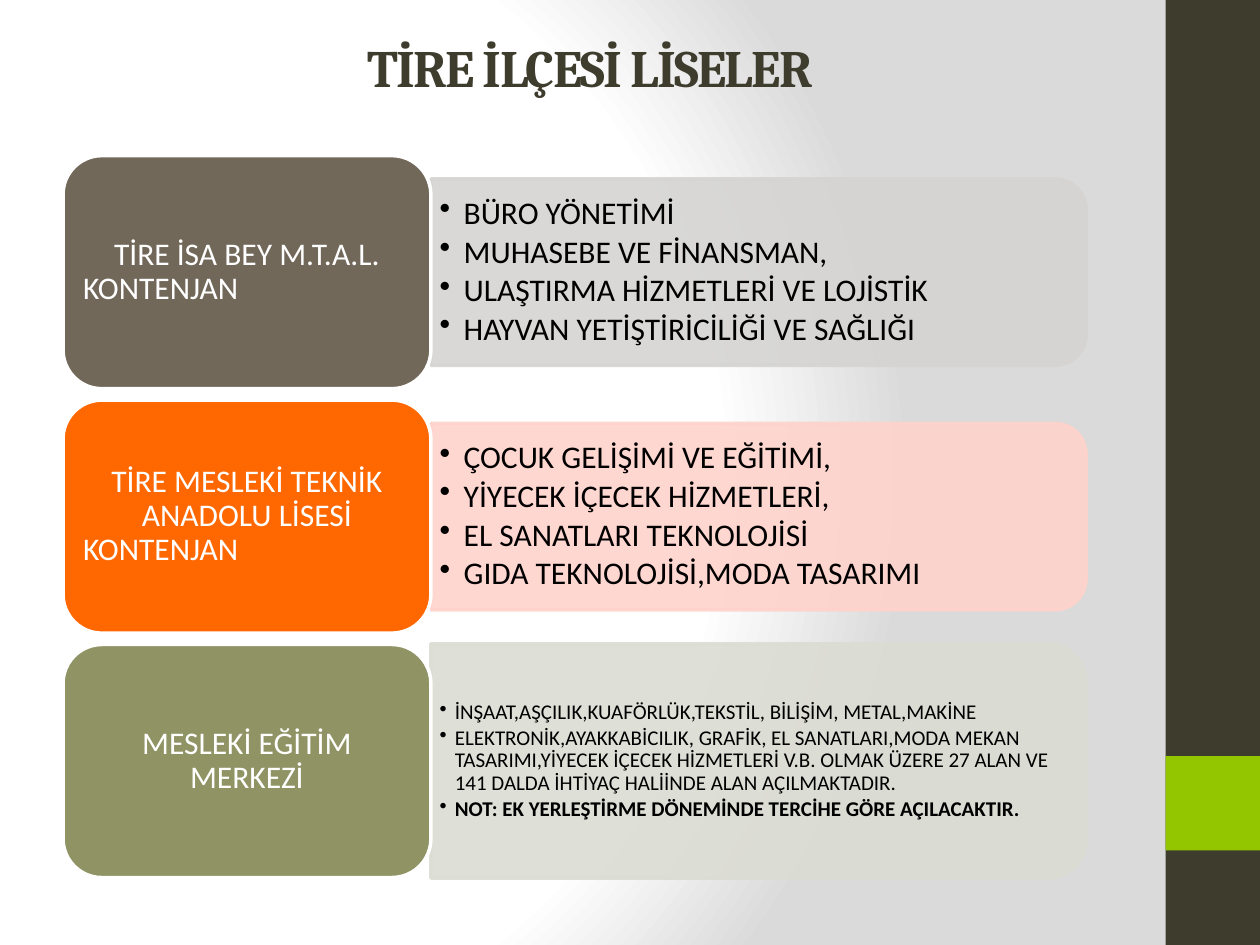
"""Build the slide listing the vocational high schools of the Tire district."""
from lxml.etree import SubElement
from pptx import Presentation
from pptx.dml.color import RGBColor
from pptx.enum.shapes import MSO_SHAPE
from pptx.enum.text import MSO_ANCHOR, PP_ALIGN
from pptx.oxml import parse_xml
from pptx.oxml.ns import nsdecls, qn
from pptx.util import Inches, Pt

WHITE = RGBColor(0xFF, 0xFF, 0xFF)
BLACK = RGBColor(0x00, 0x00, 0x00)
DARK = RGBColor(0x3E, 0x3D, 0x2D)
GREEN = RGBColor(0x94, 0xC6, 0x00)
BROWN = RGBColor(0x71, 0x68, 0x5A)
ORANGE = RGBColor(0xFF, 0x67, 0x00)
OLIVE = RGBColor(0x90, 0x94, 0x65)
PALE_GREY = RGBColor(0xD5, 0xD4, 0xD2)
PALE_PINK = RGBColor(0xFF, 0xD3, 0xCC)
PALE_OLIVE = RGBColor(0xDB, 0xDC, 0xD3)

BACKDROP = f"""<a:gradFill {nsdecls('a')} rotWithShape="1"><a:gsLst>
<a:gs pos="0"><a:srgbClr val="FFFFFF"/></a:gs>
<a:gs pos="75000"><a:srgbClr val="FFFFFF"/></a:gs>
<a:gs pos="100000"><a:srgbClr val="DADADA"/></a:gs></a:gsLst>
<a:path path="circle"><a:fillToRect l="20000" t="50000" r="100000" b="50000"/></a:path>
</a:gradFill>"""

SCHOOLS = [
    (BROWN, PALE_GREY, 1.48, 18, 0.19,
     ["TİRE İSA BEY M.T.A.L.", "KONTENJAN"],
     ["BÜRO YÖNETİMİ", "MUHASEBE VE FİNANSMAN,",
      "ULAŞTIRMA HİZMETLERİ VE LOJİSTİK", "HAYVAN YETİŞTİRİCİLİĞİ VE SAĞLIĞI"]),
    (ORANGE, PALE_PINK, 1.48, 18, 0.19,
     ["TİRE MESLEKİ TEKNİK ANADOLU LİSESİ", "KONTENJAN"],
     ["ÇOCUK GELİŞİMİ VE EĞİTİMİ,", "YİYECEK İÇECEK HİZMETLERİ,",
      "EL SANATLARI TEKNOLOJİSİ", "GIDA TEKNOLOJİSİ,MODA TASARIMI"]),
    (OLIVE, PALE_OLIVE, 1.86, 12, 0.12,
     ["MESLEKİ EĞİTİM MERKEZİ"],
     ["İNŞAAT,AŞÇILIK,KUAFÖRLÜK,TEKSTİL, BİLİŞİM, METAL,MAKİNE",
      "ELEKTRONİK,AYAKKABİCILIK, GRAFİK, EL SANATLARI,MODA MEKAN "
      "TASARIMI,YİYECEK İÇECEK HİZMETLERİ V.B. OLMAK ÜZERE 27 ALAN VE "
      "141 DALDA İHTİYAÇ HALİİNDE ALAN AÇILMAKTADIR.",
      "NOT: EK YERLEŞTİRME DÖNEMİNDE TERCİHE GÖRE AÇILACAKTIR."]),
]
FIRST_CENTRE, ROW_STEP = 2.16, 1.94
BAND_LEFT, BAND_LENGTH = 3.42, 5.2


def add_panel(page, kind, left, top, width, height, fill, line=None):
    panel = page.shapes.add_shape(
        kind, Inches(left), Inches(top), Inches(width), Inches(height))
    panel.shadow.inherit = False
    panel.fill.solid()
    panel.fill.fore_color.rgb = fill
    if line is None:
        panel.line.fill.background()
    else:
        panel.line.color.rgb = line
        panel.line.width = Pt(2)
    return panel


def add_text(page, left, top, width, height, lines, font, size, color):
    box = page.shapes.add_textbox(
        Inches(left), Inches(top), Inches(width), Inches(height))
    frame = box.text_frame
    frame.word_wrap = True
    frame.vertical_anchor = MSO_ANCHOR.MIDDLE
    frame.margin_left = frame.margin_right = Inches(0.07)
    frame.margin_top = frame.margin_bottom = Inches(0.04)
    frame.text = "\n".join(lines)
    for para in frame.paragraphs:
        para.font.name = font
        para.font.size = Pt(size)
        para.font.color.rgb = color
    return frame.paragraphs


deck = Presentation()
deck.slide_width, deck.slide_height = Inches(10), Inches(7.5)
page = deck.slides.add_slide(deck.slide_layouts[6])

page.background.fill.solid()
solid = page.element.find(".//" + qn("p:bgPr")).find(qn("a:solidFill"))
solid.getparent().replace(solid, parse_xml(BACKDROP))

add_panel(page, MSO_SHAPE.RECTANGLE, 9.25, 0, 0.75, 7.5, DARK)
add_panel(page, MSO_SHAPE.RECTANGLE, 9.25, 6, 0.75, 0.75, GREEN)

for row, (fill, pale, depth, size, indent, name, fields) in enumerate(SCHOOLS):
    centre = FIRST_CENTRE + row * ROW_STEP
    band = add_panel(page, MSO_SHAPE.ROUND_2_SAME_RECTANGLE,
                     BAND_LEFT + (BAND_LENGTH - depth) / 2, centre - BAND_LENGTH / 2,
                     depth, BAND_LENGTH, pale, pale)
    band.rotation = 90
    for tint in band.element.spPr.iter(qn("a:srgbClr")):
        SubElement(tint, qn("a:alpha"), val="90000")

    height = depth - 0.14
    for para in add_text(page, BAND_LEFT, centre - height / 2, 5.13, height,
                         fields, "Calibri", size, BLACK):
        para.line_spacing = 0.9
        para.space_after = Pt(size * 0.15)
        para.font.bold = para.text.startswith("NOT:")
        settings = para._p.get_or_add_pPr()
        settings.set("marL", str(Inches(indent)))
        settings.set("indent", str(-Inches(indent)))
        bullet = parse_xml(f'<a:buChar {nsdecls("a")} char="•"/>')
        settings.find(qn("a:defRPr")).addprevious(bullet)

    add_panel(page, MSO_SHAPE.ROUNDED_RECTANGLE,
              0.5, centre - 0.925, 2.92, 1.85, fill, WHITE)
    for para in add_text(page, 0.59, centre - 0.835, 2.74, 1.67,
                         name, "Calibri", 18, WHITE):
        para.line_spacing = 0.9
        para.alignment = PP_ALIGN.LEFT if para.text == "KONTENJAN" else PP_ALIGN.CENTER

title = add_text(page, 0.52, 0.14, 8.33, 0.77,
                 ["TİRE İLÇESİ LİSELER"], "Cambria", 30, DARK)[0]
title.alignment = PP_ALIGN.CENTER
title.font.bold = True
title.runs[0]._r.get_or_add_rPr().set("spc", "-100")

deck.save("out.pptx")
